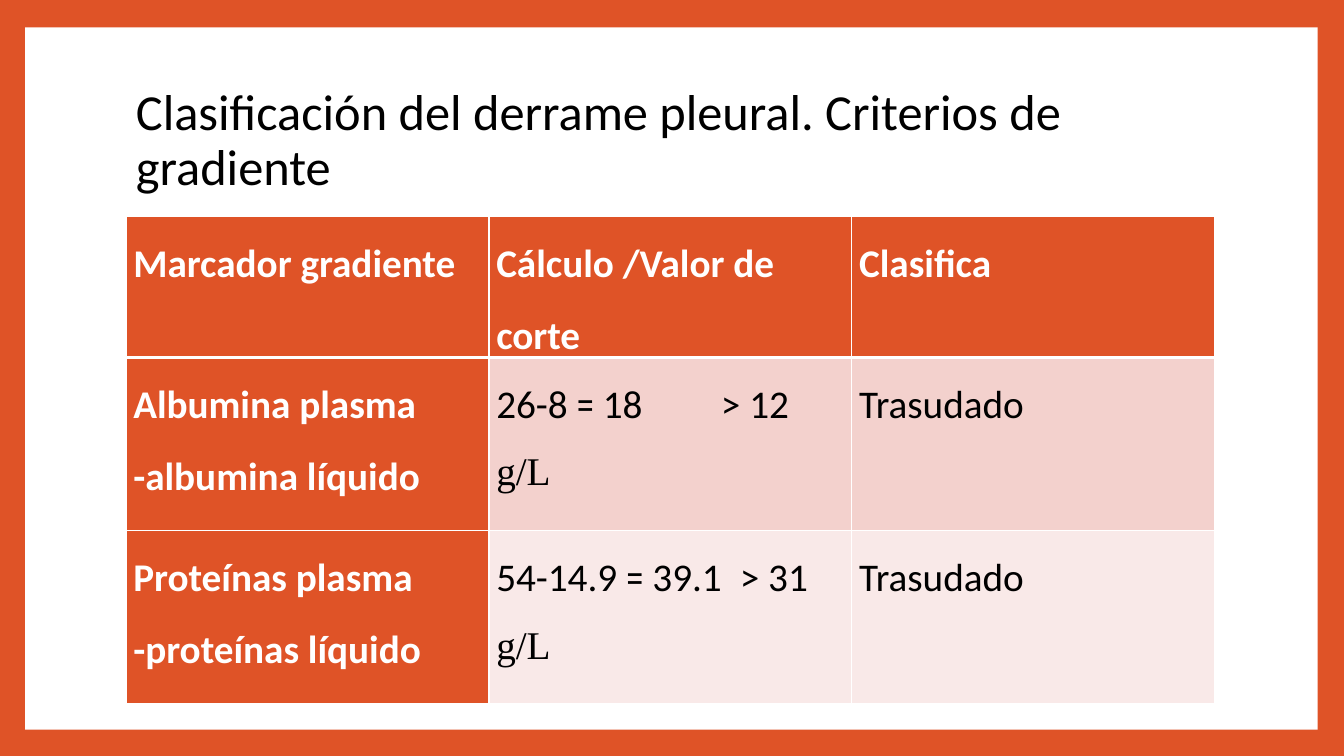
from dataclasses import dataclass

from lxml import etree
from pptx import Presentation
from pptx.dml.color import RGBColor
from pptx.enum.shapes import MSO_SHAPE
from pptx.enum.text import MSO_ANCHOR
from pptx.oxml.ns import qn
from pptx.util import Pt

EMU_PER_PX = 9525  # 96 px to the inch


@dataclass(frozen=True)
class Theme:
    accent: str = "DF5327"
    paper: str = "FFFFFF"
    ink: str = "000000"
    bands: tuple = ("F3D1CD", "F9E9E8")
    font: str = "Calibri"
    unit_font: str = "Times New Roman"
    title_size: int = 36
    table_size: int = 28
    thin_border: int = 1
    header_border: int = 3


THEME = Theme()

HEADER = ("Marcador gradiente", "Cálculo /Valor de corte", "Clasifica")
# Marker, calculation, cutoff, px where the cutoff starts, class
MARKERS = (
    ("Albumina plasma -albumina líquido", "26-8 ꞊ 18", "> 12 ", 214, "Trasudado"),
    ("Proteínas plasma -proteínas líquido", "54-14.9 ꞊ 39.1", "> 31 ", 232, "Trasudado"),
)
UNIT = "g/L"
ROW_HEIGHTS = (134, 165, 165)


def px(length):
    return length * EMU_PER_PX


def rgb(color):
    return RGBColor.from_string(color)


def add_run(paragraph, text, size, color, bold=False, font=THEME.font):
    run = paragraph.add_run()
    run.text = text
    run.font.name = font
    run.font.size = Pt(size)
    run.font.bold = bold
    run.font.color.rgb = rgb(color)


def add_tab_stop(paragraph, position):
    tab_list = etree.SubElement(paragraph._p.get_or_add_pPr(), qn("a:tabLst"))
    etree.SubElement(tab_list, qn("a:tab"), pos=str(px(position)), algn="l")


def set_borders(cell, bottom_width):
    properties = cell._tc.get_or_add_tcPr()
    widths = {"L": THEME.thin_border, "R": THEME.thin_border,
              "T": THEME.thin_border, "B": bottom_width}
    for index, (side, width) in enumerate(widths.items()):
        line = etree.Element(qn(f"a:ln{side}"), w=str(Pt(width)))
        fill = etree.SubElement(line, qn("a:solidFill"))
        etree.SubElement(fill, qn("a:srgbClr"), val=THEME.paper)
        properties.insert(index, line)


def style_cell(cell, fill, bottom_width=THEME.thin_border):
    """Format the cell and return its paragraph."""
    cell.fill.solid()
    cell.fill.fore_color.rgb = rgb(fill)
    cell.margin_left = cell.margin_right = px(7)
    cell.margin_top = cell.margin_bottom = 0
    set_borders(cell, bottom_width)
    paragraph = cell.text_frame.paragraphs[0]
    paragraph.line_spacing = 1.5
    return paragraph


def add_frame(slide, left, top, width, height):
    slide.background.fill.solid()
    slide.background.fill.fore_color.rgb = rgb(THEME.accent)
    panel = slide.shapes.add_shape(
        MSO_SHAPE.RECTANGLE, px(left), px(top), px(width), px(height))
    panel.shadow.inherit = False
    panel.fill.solid()
    panel.fill.fore_color.rgb = rgb(THEME.paper)
    panel.line.fill.background()


def add_title(slide, left, top, width, height):
    box = slide.shapes.add_textbox(px(left), px(top), px(width), px(height))
    frame = box.text_frame
    frame.word_wrap = True
    frame.vertical_anchor = MSO_ANCHOR.MIDDLE
    paragraph = frame.paragraphs[0]
    paragraph.line_spacing = 0.9
    add_run(paragraph, "Clasificación del derrame pleural. Criterios de gradiente",
            THEME.title_size, THEME.ink)


def add_gradient_table(slide, left, top, width, row_heights):
    table = slide.shapes.add_table(
        len(row_heights), len(HEADER), px(left), px(top),
        px(width), px(sum(row_heights))).table
    for column in table.columns:
        column.width = px(width) // len(HEADER)
    for row, height in zip(table.rows, row_heights):
        row.height = px(height)

    # Header row
    for index, heading in enumerate(HEADER):
        paragraph = style_cell(table.cell(0, index), THEME.accent, THEME.header_border)
        add_run(paragraph, heading, THEME.table_size, THEME.paper, bold=True)

    # One row for each marker
    for row, (marker, calculation, cutoff, cutoff_left, kind) in enumerate(MARKERS, 1):
        band = THEME.bands[row - 1]
        paragraph = style_cell(table.cell(row, 0), THEME.accent)
        add_run(paragraph, marker, THEME.table_size, THEME.paper, bold=True)

        paragraph = style_cell(table.cell(row, 1), band)
        add_tab_stop(paragraph, cutoff_left)
        add_run(paragraph, f"{calculation}\t{cutoff}", THEME.table_size, THEME.ink)
        add_run(paragraph, UNIT, THEME.table_size, THEME.ink, font=THEME.unit_font)

        paragraph = style_cell(table.cell(row, 2), band)
        add_run(paragraph, kind, THEME.table_size, THEME.ink)


def main():
    presentation = Presentation()
    presentation.slide_width = px(1280)
    presentation.slide_height = px(720)
    slide = presentation.slides.add_slide(presentation.slide_layouts[6])
    add_frame(slide, 24, 26, 1231, 669)
    add_title(slide, 120, 64, 1037, 142)
    add_gradient_table(slide, 120, 206, 1037, ROW_HEIGHTS)
    presentation.save("out.pptx")


if __name__ == "__main__":
    main()
